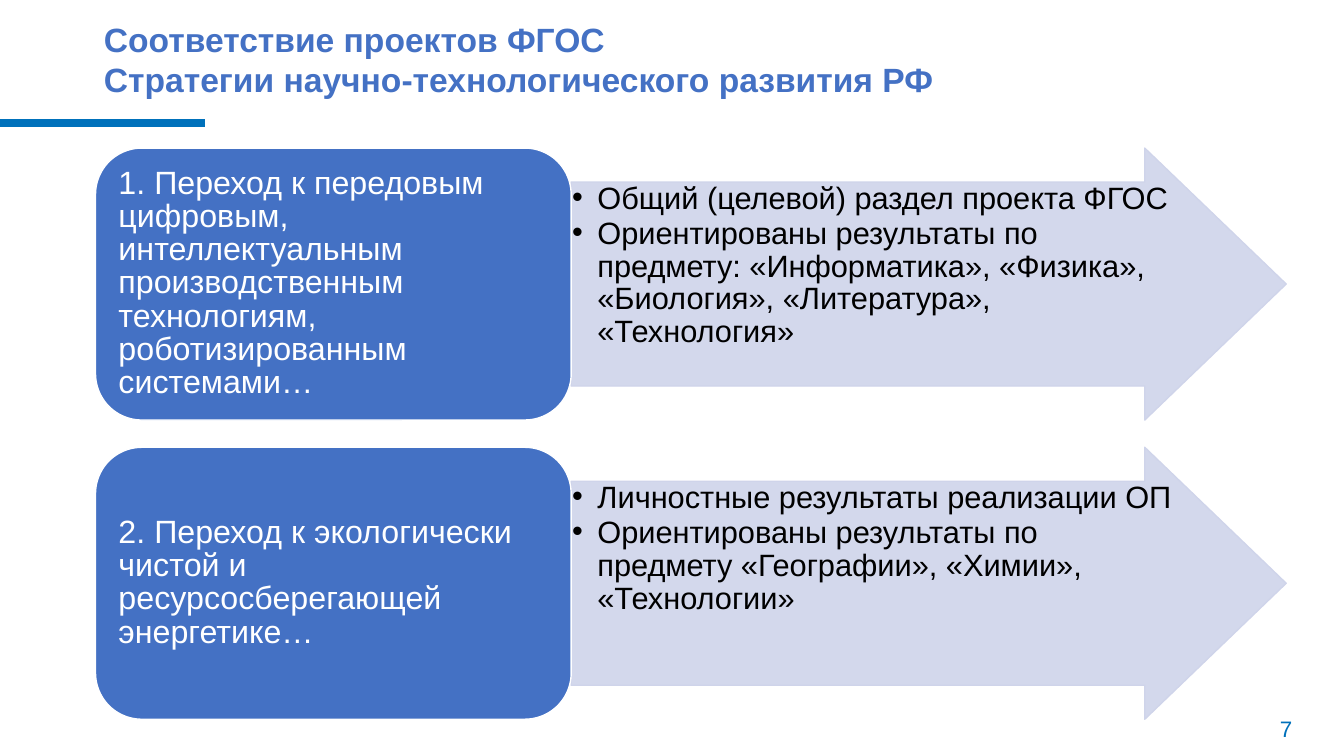
import pptx
import pptx.dml.color
import pptx.enum.shapes
import pptx.enum.text
import pptx.oxml
import pptx.oxml.ns
import pptx.util
import lxml.etree

PX = 9525
BLUE, ACCENT, PALE, WHITE, BLACK = "4471C4", "0071BB", "CFD4EA", "FFFFFF", "000000"
ROW_TOP, ROW_PITCH, ROW_HEIGHT = 141, 285, 259
CARD_LEFT, CARD_WIDTH, ARROW_WIDTH = 91, 453, 681
ARROW_LEFT = CARD_LEFT + CARD_WIDTH
LIST_OFFSET, LIST_WIDTH = 27, 580

ROWS = [
    ("1. Переход к передовым цифровым, интеллектуальным производственным "
     "технологиям, роботизированным системами…",
     ["Общий (целевой) раздел проекта ФГОС",
      "Ориентированы результаты по\vпредмету: «Информатика», «Физика»,\v"
      "«Биология», «Литература»,\v«Технология»"], 164),
    ("2. Переход к экологически чистой и ресурсосберегающей энергетике…",
     ["Личностные результаты реализации ОП",
      "Ориентированы результаты по\vпредмету «Географии», «Химии»,\v«Технологии»"], 134),
]


def px(value):
    return pptx.util.Emu(value * PX)


def color(value):
    return pptx.dml.color.RGBColor.from_string(value)


def apply(target, formats):
    for name, value in formats.items():
        setattr(target, name, value)


def place(shape, left, top, width, height):
    apply(shape, {"left": px(left), "top": px(top), "width": px(width), "height": px(height)})


def set_frame(frame, left=0, top=0, right=0, bottom=0, anchor="TOP"):
    apply(frame, {
        "margin_left": px(left), "margin_top": px(top),
        "margin_right": px(right), "margin_bottom": px(bottom),
        "word_wrap": True, "auto_size": pptx.enum.text.MSO_AUTO_SIZE.NONE,
        "vertical_anchor": getattr(pptx.enum.text.MSO_ANCHOR, anchor),
    })


def write(paragraph, text, size, text_color, bold=False, spacing=1.0, before=0):
    paragraph.text = text
    apply(paragraph, {
        "alignment": pptx.enum.text.PP_ALIGN.LEFT, "line_spacing": spacing,
        "space_before": pptx.util.Pt(before), "space_after": pptx.util.Pt(0),
    })
    for run in paragraph.runs:
        apply(run.font, {"name": "Arial", "size": pptx.util.Pt(size), "bold": bold})
        run.font.color.rgb = color(text_color)


def add_bullet(paragraph):
    properties = paragraph._p.get_or_add_pPr()
    properties.set("marL", str(px(25)))
    properties.set("indent", str(px(-24)))
    bullet = lxml.etree.SubElement(properties, pptx.oxml.ns.qn("a:buChar"))
    bullet.set("char", "•")


def add_preset(slide, kind, box, adjustments, fill, line):
    shape = slide.shapes.add_shape(
        getattr(pptx.enum.shapes.MSO_SHAPE, kind), *[px(value) for value in box])
    shape.shadow.inherit = False
    for index, value in enumerate(adjustments):
        shape.adjustments[index] = value
    shape.fill.solid()
    shape.fill.fore_color.rgb = color(fill)
    shape.line.color.rgb = color(line)
    shape.line.width = pptx.util.Pt(1)
    return shape


def add_arrow(slide, top):
    box = (ARROW_LEFT, top, ARROW_WIDTH, ROW_HEIGHT)
    arrow = add_preset(slide, "RIGHT_ARROW", box, [0.75, 0.52], PALE, PALE)
    fill = arrow._element.spPr.find(pptx.oxml.ns.qn("a:solidFill"))
    alpha = lxml.etree.SubElement(fill[0], pptx.oxml.ns.qn("a:alpha"))
    alpha.set("val", "90000")


def add_card(slide, top, text):
    box = (CARD_LEFT, top, CARD_WIDTH, ROW_HEIGHT)
    card = add_preset(slide, "ROUNDED_RECTANGLE", box, [0.17], BLUE, WHITE)
    set_frame(card.text_frame, left=9, right=42, anchor="MIDDLE")
    write(card.text_frame.paragraphs[0], text, 23, WHITE, spacing=0.86)


def fill_list(placeholder, top, height, items):
    place(placeholder, ARROW_LEFT, top + LIST_OFFSET, LIST_WIDTH, height)
    frame = placeholder.text_frame
    set_frame(frame, top=2)
    for index, item in enumerate(items):
        paragraph = frame.add_paragraph() if index else frame.paragraphs[0]
        add_bullet(paragraph)
        spacing = pptx.util.Pt(23.4) if index else 1.0
        write(paragraph, item, 22, BLACK, spacing=spacing, before=1.6 * index)
    element = placeholder._element
    element.getparent().append(element)


def fill_title(title):
    place(title, 99, 16, 792, 80)
    set_frame(title.text_frame, top=2)
    write(title.text_frame.paragraphs[0],
          "Соответствие проектов ФГОС\vСтратегии научно-технологического развития РФ",
          24, BLUE, bold=True)


def add_rule(slide):
    rule = slide.shapes.add_connector(
        pptx.enum.shapes.MSO_CONNECTOR.STRAIGHT, px(0), px(117), px(195), px(117))
    rule.line.color.rgb = color(ACCENT)
    rule.line.width = pptx.util.Pt(6)
    lxml.etree.SubElement(rule._element.spPr, pptx.oxml.ns.qn("a:effectLst"))


def add_page_number(slide):
    box = slide.shapes.add_textbox(px(1215), px(682), px(33), px(27))
    set_frame(box.text_frame, left=4)
    write(box.text_frame.paragraphs[0], "7", 16, ACCENT, spacing=pptx.util.Pt(18.7))


def main():
    presentation = pptx.Presentation()
    apply(presentation, {"slide_width": px(1280), "slide_height": px(720)})
    slide = presentation.slides.add_slide(presentation.slide_layouts.get_by_name("Two Content"))
    title, *lists = slide.placeholders
    add_rule(slide)
    for index, (goal, items, height) in enumerate(ROWS):
        top = ROW_TOP + index * ROW_PITCH
        add_arrow(slide, top)
        add_card(slide, top, goal)
        fill_list(lists[index], top, height, items)
    fill_title(title)
    add_page_number(slide)
    presentation.save("out.pptx")


if __name__ == "__main__":
    main()
